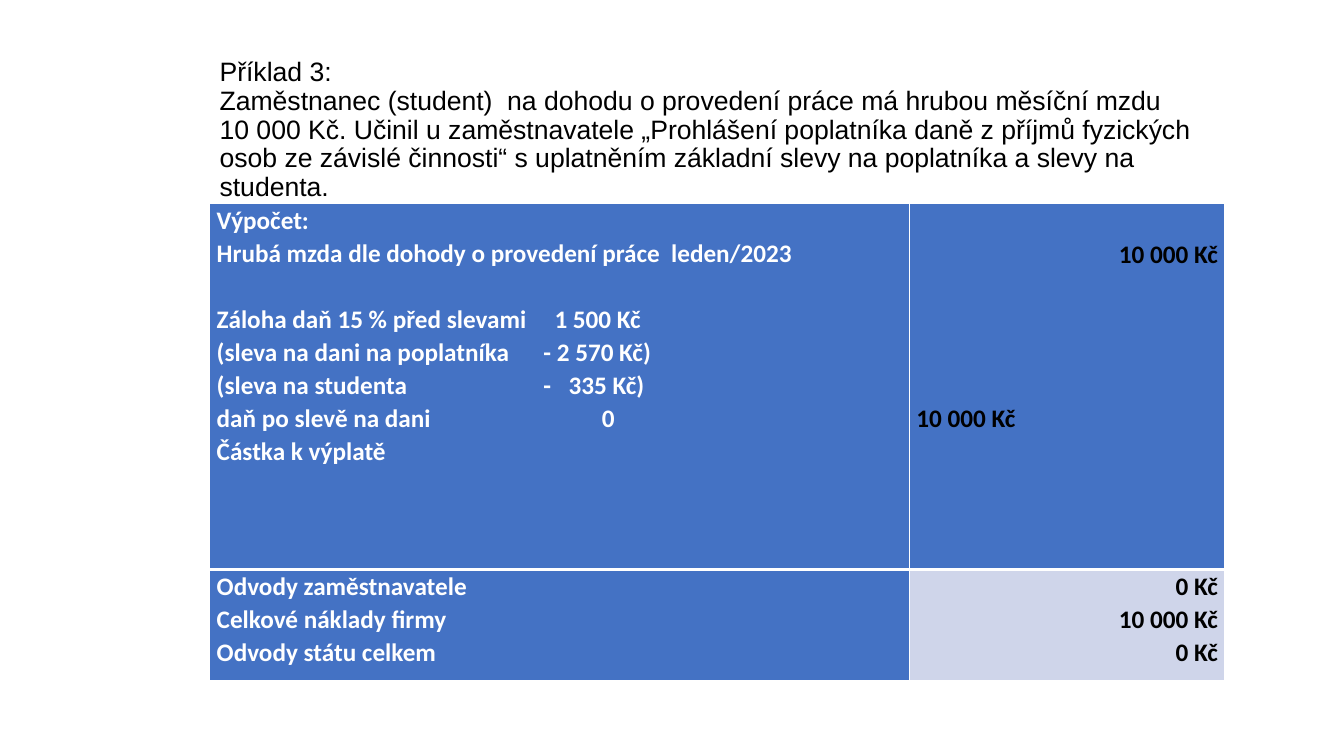
import pptx
import pptx.util
import pptx.dml.color
import pptx.enum.text
import pptx.oxml
import pptx.oxml.ns
from pptx.util import Inches

RGBColor = pptx.dml.color.RGBColor
BLACK = RGBColor(0x00, 0x00, 0x00)
WHITE = RGBColor(0xFF, 0xFF, 0xFF)
BLUE = RGBColor(0x44, 0x72, 0xC4)
PALE = RGBColor(0xCF, 0xD5, 0xEA)
LEFT = pptx.enum.text.PP_ALIGN.LEFT
RIGHT = pptx.enum.text.PP_ALIGN.RIGHT
LINE_PT = 23.5  # height of one text line in the table

TITLE = (
    "Příklad 3:\v"
    "Zaměstnanec (student)  na dohodu o provedení práce má hrubou měsíční mzdu\v"
    "10 000 Kč. Učinil u zaměstnavatele „Prohlášení poplatníka daně z\u00a0příjmů "
    "fyzických osob ze závislé činnosti“ s\u00a0uplatněním základní slevy na "
    "poplatníka a slevy na studenta."
)

# Each line: text, alignment, empty lines above, tab stops in inches
CALCULATION = [
    ("Výpočet:", LEFT, 0, []),
    ("Hrubá mzda dle dohody o provedení práce  leden/2023", LEFT, 0, []),
    ("Záloha daň 15 % před slevami\t1 500 Kč", LEFT, 1, [3.35]),
    ("(sleva na dani na poplatníka\t- 2 570 Kč)", LEFT, 0, [3.24]),
    ("(sleva na studenta\t-\t335 Kč)", LEFT, 0, [3.24, 3.49]),
    ("daň po slevě na dani\t0", LEFT, 0, [3.82]),
    ("Částka k výplatě", LEFT, 0, []),
]
WAGE = [("10 000 Kč", RIGHT, 0, []), ("10 000 Kč", LEFT, 4, [])]
TOTALS = [
    ("Odvody zaměstnavatele", "0 Kč"),
    ("Celkové náklady firmy", "10 000 Kč"),
    ("Odvody státu celkem", "0 Kč"),
]


def style_font(font, name, size, color, bold=False):
    font.name = name
    font.size = pptx.util.Pt(size)
    font.bold = bold
    font.color.rgb = color


def add_title(slide):
    sp = slide.shapes.add_textbox(Inches(2.08), Inches(0.57), Inches(10.32), Inches(1.45))
    tf = sp.text_frame
    tf.word_wrap = True
    tf.vertical_anchor = pptx.enum.text.MSO_ANCHOR.MIDDLE
    tf.text = TITLE
    p = tf.paragraphs[0]
    p.line_spacing = 0.9
    for r in p.runs:
        style_font(r.font, "Arial", 19, BLACK)


def add_tabs(p, stops):
    tabs = pptx.oxml.parse_xml("<a:tabLst %s/>" % pptx.oxml.ns.nsdecls("a"))
    for stop in stops:
        tab = tabs.makeelement(pptx.oxml.ns.qn("a:tab"),
                               {"pos": str(int(Inches(stop))), "algn": "l"})
        tabs.append(tab)
    p._p.get_or_add_pPr().append(tabs)


def set_borders(cell, widths):
    tc_pr = cell._tc.get_or_add_tcPr()
    for i, (side, width) in enumerate(zip("LRTB", widths)):
        tc_pr.insert(i, pptx.oxml.parse_xml(
            '<a:ln%s %s w="%d"><a:solidFill><a:srgbClr val="%s"/></a:solidFill></a:ln%s>'
            % (side, pptx.oxml.ns.nsdecls("a"), pptx.util.Pt(width), WHITE, side)))


def fill_cell(cell, lines, color, fill, borders, top=0):
    cell.margin_left = cell.margin_right = Inches(0.07)
    cell.margin_top, cell.margin_bottom = Inches(top), 0
    cell.fill.solid()
    cell.fill.fore_color.rgb = fill
    set_borders(cell, borders)
    tf = cell.text_frame
    tf.text = "\n".join(line[0] for line in lines)
    for p, (_, align, gap, stops) in zip(tf.paragraphs, lines):
        p.alignment = align
        p.line_spacing = 1.07
        if gap:
            p.space_before = pptx.util.Pt(gap * LINE_PT)
        if stops:
            add_tabs(p, stops)
        for r in p.runs:
            style_font(r.font, "Calibri", 18, color, bold=True)


def add_wage_table(slide):
    table = slide.shapes.add_table(
        2, 2, Inches(2.08), Inches(2.02), Inches(10.07), Inches(4.73)).table
    for column, width in zip(table.columns, (6.94, 3.13)):
        column.width = Inches(width)
    for row, height in zip(table.rows, (3.63, 1.1)):
        row.height = Inches(height)

    # Wage calculation, with a thick rule below
    upper, lower = (1, 1, 1, 3), (1, 1, 3, 1)
    fill_cell(table.cell(0, 0), CALCULATION, WHITE, BLUE, upper)
    fill_cell(table.cell(0, 1), WAGE, BLACK, BLUE, upper, top=0.33)

    # Totals
    labels = [(label, LEFT, 0, []) for label, _ in TOTALS]
    amounts = [(amount, RIGHT, 0, []) for _, amount in TOTALS]
    fill_cell(table.cell(1, 0), labels, WHITE, BLUE, lower)
    fill_cell(table.cell(1, 1), amounts, BLACK, PALE, lower)


def main():
    prs = pptx.Presentation()
    prs.slide_width, prs.slide_height = Inches(13.33), Inches(7.5)
    slide = prs.slides.add_slide(prs.slide_layouts[6])
    add_title(slide)
    add_wage_table(slide)
    prs.save("out.pptx")


if __name__ == "__main__":
    main()
